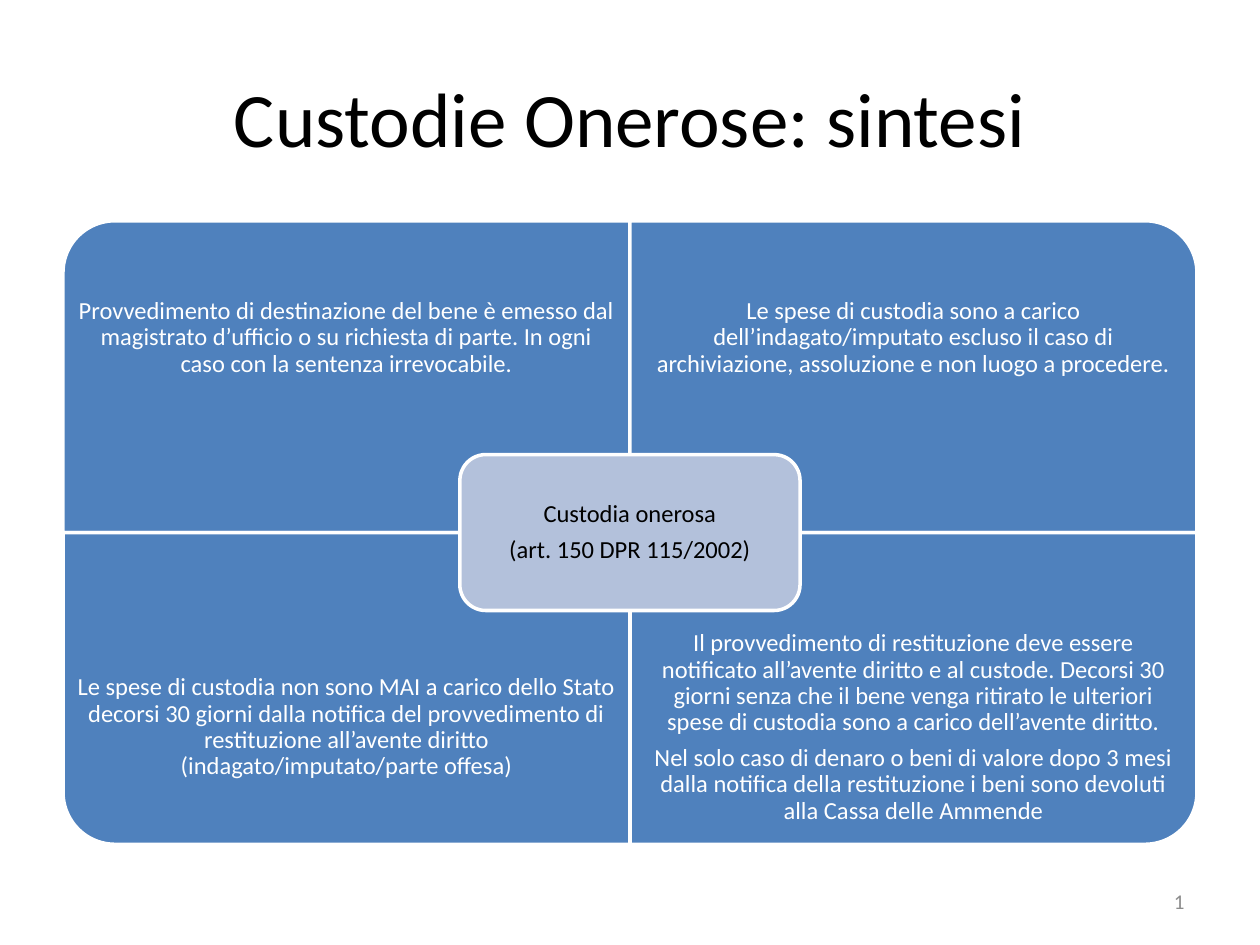
import pptx
import pptx.util
import pptx.dml.color
import pptx.enum.shapes
import pptx.enum.text

Cm, Pt = pptx.util.Cm, pptx.util.Pt
RGBColor = pptx.dml.color.RGBColor
SHAPE = pptx.enum.shapes.MSO_SHAPE
ALIGN = pptx.enum.text.PP_ALIGN
MIDDLE = pptx.enum.text.MSO_ANCHOR.MIDDLE

WHITE = RGBColor(0xFF, 0xFF, 0xFF)
BLACK = RGBColor(0x00, 0x00, 0x00)
BLUE = RGBColor(0x4F, 0x81, 0xBD)
PALE = RGBColor(0xB3, 0xC1, 0xDB)
GREY = RGBColor(0x8C, 0x8C, 0x8C)

# Turn of each rounded corner and its text, row by row
PARTS = [
    (270, "Provvedimento di destinazione del bene è emesso dal magistrato "
          "d’ufficio o su richiesta di parte. In ogni caso con la sentenza "
          "irrevocabile."),
    (0, "Le spese di custodia sono a carico dell’indagato/imputato escluso "
        "il caso di archiviazione, assoluzione e non luogo a procedere."),
    (180, "Le spese di custodia non sono MAI a carico dello Stato decorsi 30 "
          "giorni dalla notifica del provvedimento di restituzione all’avente "
          "diritto (indagato/imputato/parte offesa)"),
    (90, "Il provvedimento di restituzione deve essere notificato all’avente "
         "diritto e al custode. Decorsi 30 giorni senza che il bene venga "
         "ritirato le ulteriori spese di custodia sono a carico dell’avente "
         "diritto.\n"
         "Nel solo caso di denaro o beni di valore dopo 3 mesi dalla notifica "
         "della restituzione i beni sono devoluti alla Cassa delle Ammende"),
]
CORE = "Custodia onerosa\n(art. 150 DPR 115/2002)"


def write(shape, text, size, color, align=ALIGN.CENTER, inset=None, tight=False):
    frame = shape.text_frame
    frame.text = text
    frame.word_wrap = True
    frame.vertical_anchor = MIDDLE
    if inset is not None:
        frame.margin_left = frame.margin_right = inset
        frame.margin_top = frame.margin_bottom = inset
    for para in frame.paragraphs:
        para.alignment = align
        if tight:
            para.line_spacing = 0.9
            para.space_after = Pt(0.35 * size)
        for run in para.runs:
            run.font.name = "Calibri"
            run.font.size = Pt(size)
            run.font.color.rgb = color


def panel(slide, kind, box, fill):
    shape = slide.shapes.add_shape(kind, *box)
    shape.shadow.inherit = False
    shape.fill.solid()
    shape.fill.fore_color.rgb = fill
    shape.line.color.rgb = WHITE
    shape.line.width = Pt(2)
    return shape


def label(slide, box, *args, **style):
    write(slide.shapes.add_textbox(*box), *args, **style)


def matrix(slide, left, top, width, height):
    wide, high = width // 2, height // 2
    for i, (turn, text) in enumerate(PARTS):
        row, col = divmod(i, 2)
        x, y = left + col * wide, top + row * high
        # A quarter turn swaps the sides around the same centre
        w, h = (high, wide) if turn % 180 else (wide, high)
        box = (x + (wide - w) // 2, y + (high - h) // 2, w, h)
        panel(slide, SHAPE.ROUND_1_RECTANGLE, box, BLUE).rotation = turn
        # Text takes the outer three quarters of the cell
        label(slide, (x, y + row * high // 4, wide, high * 3 // 4),
              text, 14, WHITE, inset=Cm(0.28), tight=True)

    # Core panel over the crossing
    w, h = int(wide * 0.6), high // 2
    box = (left + wide - w // 2, top + high - h // 2, w, h)
    core = panel(slide, SHAPE.ROUNDED_RECTANGLE, box, PALE)
    write(core, CORE, 14, BLACK, inset=Cm(0.15), tight=True)


def main():
    deck = pptx.Presentation()
    deck.slide_width, deck.slide_height = Cm(25.4), Cm(19.05)
    slide = deck.slides.add_slide(deck.slide_layouts[6])

    # Title
    label(slide, (Cm(1.27), Cm(0.76), Cm(22.86), Cm(3.18)),
          "Custodie Onerose: sintesi", 44, BLACK)
    # Four cells and core
    matrix(slide, Cm(1.27), Cm(4.45), Cm(22.86), Cm(12.57))
    # Page number
    label(slide, (Cm(18.2), Cm(17.66), Cm(5.93), Cm(1.01)),
          "1", 12, GREY, align=ALIGN.RIGHT)

    deck.save("out.pptx")


if __name__ == "__main__":
    main()
